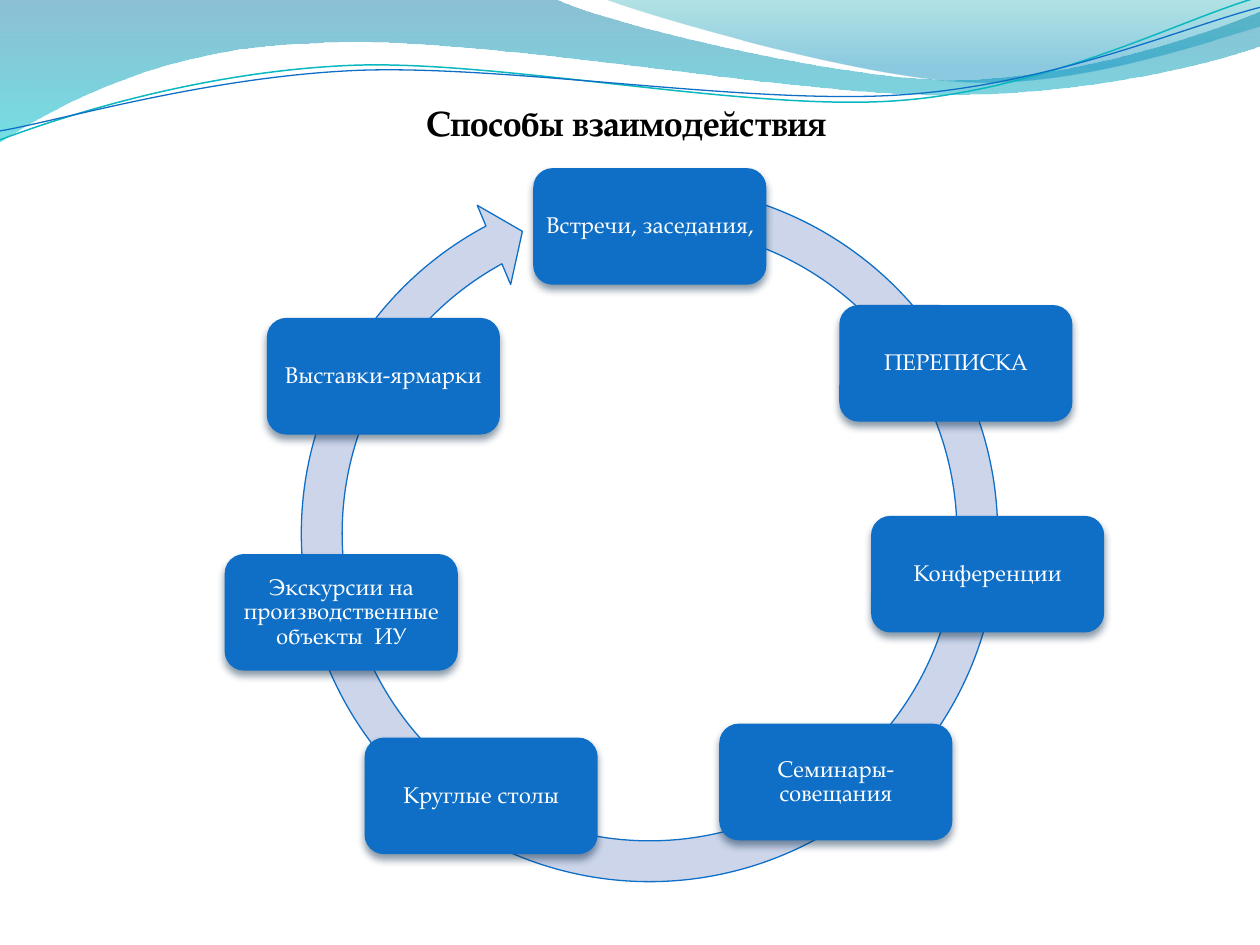
"""Builds a slide showing the ways of working together as a cycle."""
from dataclasses import dataclass

from lxml.etree import SubElement
from pptx import Presentation
from pptx.dml.color import RGBColor
from pptx.enum.shapes import MSO_SHAPE
from pptx.enum.text import MSO_ANCHOR, PP_ALIGN
from pptx.oxml.ns import qn
from pptx.util import Cm, Pt


@dataclass(frozen=True)
class Theme:
    """Colours and type of the slide."""
    font: str = "TeX Gyre Pagella"
    title_size: int = 20
    node_size: int = 13
    title: str = "000000"
    node_text: str = "FFFFFF"
    blue: str = "0F6FC6"
    teal: str = "0AB8BF"
    ring: str = "CCD5EA"
    shadow: str = "042747"
    left_wave: tuple = ((0, "0074A1", 45), (1, "00C6CF", 55))
    right_wave: tuple = ((0, "00A1A9", 30), (0.8, "008BBF", 45))


THEME = Theme()
NODE_WIDTH, NODE_HEIGHT = 4.7, 2.35
NODES = [
    ("Встречи, заседания, ", 10.75, 3.39),
    ("ПЕРЕПИСКА", 16.92, 6.15),
    ("Конференции", 17.56, 10.4),
    ("Семинары-совещания", 14.5, 14.59),
    ("Круглые столы", 7.35, 14.87),
    ("Экскурсии на производственные объекты  ИУ", 4.53, 11.17),
    ("Выставки-ярмарки", 5.38, 6.41),
]
LEFT_WAVE = [
    [(0, 0)],
    [(11.18, -0.03)],
    [(12.09, 0.43), (16.87, 1.6), (19.25, 1.6)],
    [(21.67, 1.6), (24.33, 0.66), (25.4, 0.23)],
    [(25.43, 0.91)],
    [(24.97, 1.12), (22.1, 1.93), (18.95, 1.91)],
    [(15.8, 1.91), (9.7, 0.71), (6.53, 0.86)],
    [(3.28, 0.91), (1.17, 2.11), (-0.03, 2.87)],
    [(0, 0)],
]
RIGHT_WAVE = [
    [(12.17, -0.03)],
    [(12.93, 0.28), (17.32, 1.57), (19.53, 1.65)],
    [(21.74, 1.75), (24.41, 0.81), (25.4, 0.53)],
    [(25.4, 0)],
    [(12.17, -0.03)],
]
TEAL_LINE = [
    [(0, 2.82)],
    [(1.22, 2.36), (4.01, 1.45), (7.04, 1.32)],
    [(10.03, 1.19), (15.06, 2.26), (18.11, 2.03)],
    [(21.16, 1.8), (23.83, 0.38), (25.35, -0.05)],
]
BLUE_LINE = [
    [(0, 2.64)],
    [(1.19, 2.44), (4.17, 1.55), (7.19, 1.42)],
    [(10.24, 1.3), (15.16, 2.13), (18.21, 1.91)],
    [(21.23, 1.7), (23.9, 0.53), (25.4, 0.15)],
]


def color(value):
    """Return the colour for a hex value."""
    return RGBColor.from_string(value)


def bend(shape, element, controls):
    """Turn a straight path element into a cubic curve."""
    element.tag = qn("a:cubicBezTo")
    for point in list(element):
        element.remove(point)
    for x, y in controls:
        SubElement(element, qn("a:pt"), x=str(Cm(x) - shape.left), y=str(Cm(y) - shape.top))


def add_outline(slide, segments, close):
    """Add a freeform made of straight and curved segments."""
    start, *rest = [(Cm(x), Cm(y)) for x, y in (segment[-1] for segment in segments)]
    builder = slide.shapes.build_freeform(*start)
    builder.add_line_segments(rest, close=close)
    shape = builder.convert_to_shape()
    shape.shadow.inherit = False
    sides = list(shape._element.spPr.iter(qn("a:lnTo")))
    for side, segment in zip(sides, segments[1:]):
        if len(segment) == 3:
            bend(shape, side, segment)
    return shape


def add_wave(slide, segments, stops):
    """Add a wave with a translucent gradient from top to bottom."""
    shape = add_outline(slide, segments, True)
    shape.line.fill.background()
    shape.fill.gradient()
    shape.fill.gradient_angle = 270
    for stop, (position, value, _) in zip(shape.fill.gradient_stops, stops):
        stop.position = position
        stop.color.rgb = color(value)
    for element, (_, _, opacity) in zip(shape._element.spPr.iter(qn("a:srgbClr")), stops):
        SubElement(element, qn("a:alpha"), val=str(opacity * 1000))


def add_wave_line(slide, segments, value, width):
    """Add a thin curved line."""
    shape = add_outline(slide, segments, False)
    shape.fill.background()
    shape.line.color.rgb = color(value)
    shape.line.width = Pt(width)


def add_ring(slide):
    """Add the circular arrow behind the nodes."""
    ring = slide.shapes.add_shape(MSO_SHAPE.CIRCULAR_ARROW, Cm(5.62), Cm(3.28), Cm(14.95), Cm(14.95))
    ring.shadow.inherit = False
    for index, value in enumerate((0.055, 3.307, 145, 169.593, 0.058)):
        ring.adjustments[index] = value
    ring.fill.solid()
    ring.fill.fore_color.rgb = color(THEME.ring)
    ring.line.color.rgb = color(THEME.blue)
    ring.line.width = Pt(0.75)


def add_shadow(shape):
    """Give the shape a soft shadow falling downwards."""
    shape.shadow.inherit = False
    effects = shape._element.spPr.find(qn("a:effectLst"))
    shadow = SubElement(effects, qn("a:outerShdw"), blurRad=str(Pt(4.5)), dist=str(Pt(3)),
                        dir="5400000", algn="ctr", rotWithShape="0")
    tint = SubElement(shadow, qn("a:srgbClr"), val=THEME.shadow)
    SubElement(tint, qn("a:alpha"), val="48000")


def write(paragraph, text, size, value, bold=False):
    """Write centred text as one run."""
    paragraph.alignment = PP_ALIGN.CENTER
    run = paragraph.add_run()
    run.text = text
    run.font.name = THEME.font
    run.font.size = Pt(size)
    run.font.bold = bold
    run.font.color.rgb = color(value)


def add_node(slide, text, left, top):
    """Add one rounded box of the cycle."""
    node = slide.shapes.add_shape(MSO_SHAPE.ROUNDED_RECTANGLE, Cm(left), Cm(top),
                                  Cm(NODE_WIDTH), Cm(NODE_HEIGHT))
    add_shadow(node)
    node.fill.solid()
    node.fill.fore_color.rgb = color(THEME.blue)
    node.line.fill.background()
    frame = node.text_frame
    frame.word_wrap = True
    frame.vertical_anchor = MSO_ANCHOR.MIDDLE
    frame.margin_left = frame.margin_right = frame.margin_top = frame.margin_bottom = Cm(0.13)
    paragraph = frame.paragraphs[0]
    paragraph.line_spacing = 0.9
    write(paragraph, text, THEME.node_size, THEME.node_text)


def set_title(slide, text):
    """Place and fill the title."""
    title = slide.shapes.title
    title.left, title.top, title.width, title.height = Cm(1.9), Cm(1.92), Cm(21.64), Cm(1.11)
    title.text_frame.vertical_anchor = MSO_ANCHOR.TOP
    write(title.text_frame.paragraphs[0], text, THEME.title_size, THEME.title, True)


def main():
    """Build and save the presentation."""
    presentation = Presentation()
    presentation.slide_width, presentation.slide_height = Cm(25.4), Cm(19.05)
    slide = presentation.slides.add_slide(presentation.slide_layouts[5])
    add_wave(slide, LEFT_WAVE, THEME.left_wave)
    add_wave(slide, RIGHT_WAVE, THEME.right_wave)
    add_wave_line(slide, TEAL_LINE, THEME.teal, 0.85)
    add_wave_line(slide, BLUE_LINE, THEME.blue, 0.75)
    add_ring(slide)
    for text, left, top in NODES:
        add_node(slide, text, left, top)
    set_title(slide, "Способы взаимодействия ")
    presentation.save("out.pptx")


if __name__ == "__main__":
    main()
